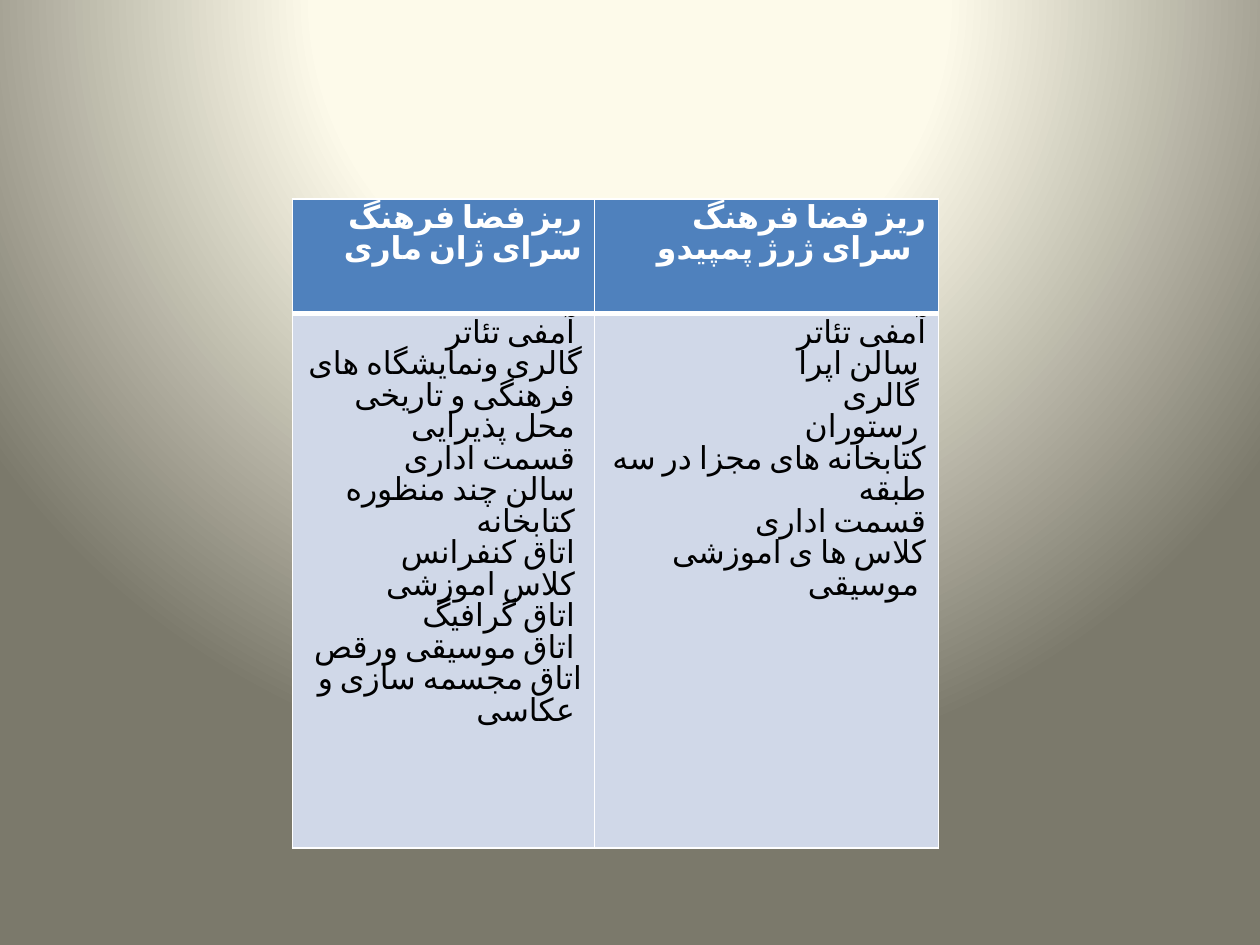
from pptx import Presentation
from pptx.dml.color import RGBColor
from pptx.enum.lang import MSO_LANGUAGE_ID
from pptx.enum.text import PP_ALIGN
from pptx.oxml import parse_xml
from pptx.oxml.ns import nsdecls, qn
from pptx.util import Inches, Pt

RIGHT = PP_ALIGN.RIGHT
FARSI = MSO_LANGUAGE_ID.FARSI
WHITE = RGBColor(0xFF, 0xFF, 0xFF)
BLACK = RGBColor(0x00, 0x00, 0x00)
HEADER_BLUE = RGBColor(0x4F, 0x81, 0xBD)
BODY_BLUE = RGBColor(0xD0, 0xD8, 0xE8)
CREAM = RGBColor(0xFD, 0xFA, 0xEA)
OLIVE = RGBColor(0x7B, 0x79, 0x6B)

FONT = "Calibri"
TEXT_SIZE = Pt(18)
THIN, THICK = Pt(1), Pt(3)
COLUMN_WIDTHS = (2.4, 2.73)
ROW_HEIGHTS = (0.91, 4.24)

CENTRES = [
    (
        "ریز فضا فرهنگ سرای ژان ماری",
        [
            "آمفی تئاتر ",
            "گالری ونمایشگاه های فرهنگی و تاریخی ",
            "محل پذیرایی ",
            "قسمت اداری ",
            "سالن چند منظوره ",
            "کتابخانه ",
            "اتاق کنفرانس ",
            "کلاس اموزشی ",
            "اتاق گرافیگ ",
            "اتاق موسیقی ورقص ",
            "اتاق مجسمه سازی و عکاسی ",
        ],
    ),
    (
        "ریز فضا فرهنگ سرای ژرژ پمپیدو  ",
        [
            "آمفی تئاتر",
            "سالن اپرا ",
            "گالری ",
            "رستوران ",
            "کتابخانه های مجزا در سه طبقه",
            "قسمت اداری",
            "کلاس ها ی اموزشی موسیقی ",
        ],
    ),
]


def paint_background(slide):
    """Fill the slide with a radial glow centred above its top edge."""
    slide.background.fill.gradient()
    linear = slide.element.find(".//" + qn("a:gradFill"))
    stops = "".join(
        f'<a:gs pos="{percent * 1000}"><a:srgbClr val="{color}"/></a:gs>'
        for percent, color in ((0, CREAM), (40, CREAM), (100, OLIVE))
    )
    glow = parse_xml(
        f'<a:gradFill {nsdecls("a")} rotWithShape="1"><a:gsLst>{stops}</a:gsLst>'
        '<a:path path="circle">'
        '<a:fillToRect l="50000" t="-80000" r="50000" b="180000"/>'
        "</a:path></a:gradFill>"
    )
    linear.getparent().replace(linear, glow)


def draw_borders(cell, top, bottom):
    """Give a cell white borders with the given top and bottom widths."""
    properties = cell._tc.get_or_add_tcPr()
    sides = (("L", THIN), ("R", THIN), ("T", top), ("B", bottom))
    for position, (side, width) in enumerate(sides):
        border = parse_xml(
            f'<a:ln{side} {nsdecls("a")} w="{width}"><a:solidFill>'
            f'<a:srgbClr val="{WHITE}"/></a:solidFill></a:ln{side}>'
        )
        properties.insert(position, border)


def style_run(run, color, bold):
    """Set the Persian text style, with the font for complex script too."""
    run.font.name = FONT
    run.font.size = TEXT_SIZE
    run.font.bold = bold
    run.font.language_id = FARSI
    run.font.color.rgb = color
    complex_font = parse_xml(f'<a:cs {nsdecls("a")} typeface="{FONT}"/>')
    run._r.get_or_add_rPr().find(qn("a:latin")).addnext(complex_font)


def fill_cell(cell, entries, background, color, bold):
    """Write one right-aligned paragraph per entry on a plain background."""
    cell.fill.solid()
    cell.fill.fore_color.rgb = background
    frame = cell.text_frame
    for index, entry in enumerate(entries):
        paragraph = frame.add_paragraph() if index else frame.paragraphs[0]
        paragraph.alignment = RIGHT
        paragraph.line_spacing = TEXT_SIZE
        run = paragraph.add_run()
        run.text = entry
        style_run(run, color, bold)


def add_spaces_table(slide, left, top, width, height):
    """Compare the spaces of the cultural centres, one column each."""
    table = slide.shapes.add_table(
        len(ROW_HEIGHTS), len(CENTRES), left, top, width, height
    ).table
    for row, row_height in zip(table.rows, ROW_HEIGHTS):
        row.height = Inches(row_height)
    for index, (title, spaces) in enumerate(CENTRES):
        table.columns[index].width = Inches(COLUMN_WIDTHS[index])
        header, body = table.cell(0, index), table.cell(1, index)
        fill_cell(header, [title], HEADER_BLUE, WHITE, True)
        draw_borders(header, THIN, THICK)
        fill_cell(body, spaces, BODY_BLUE, BLACK, False)
        draw_borders(body, THICK, THIN)


def main():
    """Build and save the slide."""
    presentation = Presentation()
    presentation.slide_width = Inches(10)
    presentation.slide_height = Inches(7.5)
    slide = presentation.slides.add_slide(presentation.slide_layouts[6])
    paint_background(slide)
    add_spaces_table(
        slide,
        Inches(2.32),
        Inches(1.58),
        Inches(sum(COLUMN_WIDTHS)),
        Inches(sum(ROW_HEIGHTS)),
    )
    presentation.save("out.pptx")


if __name__ == "__main__":
    main()
